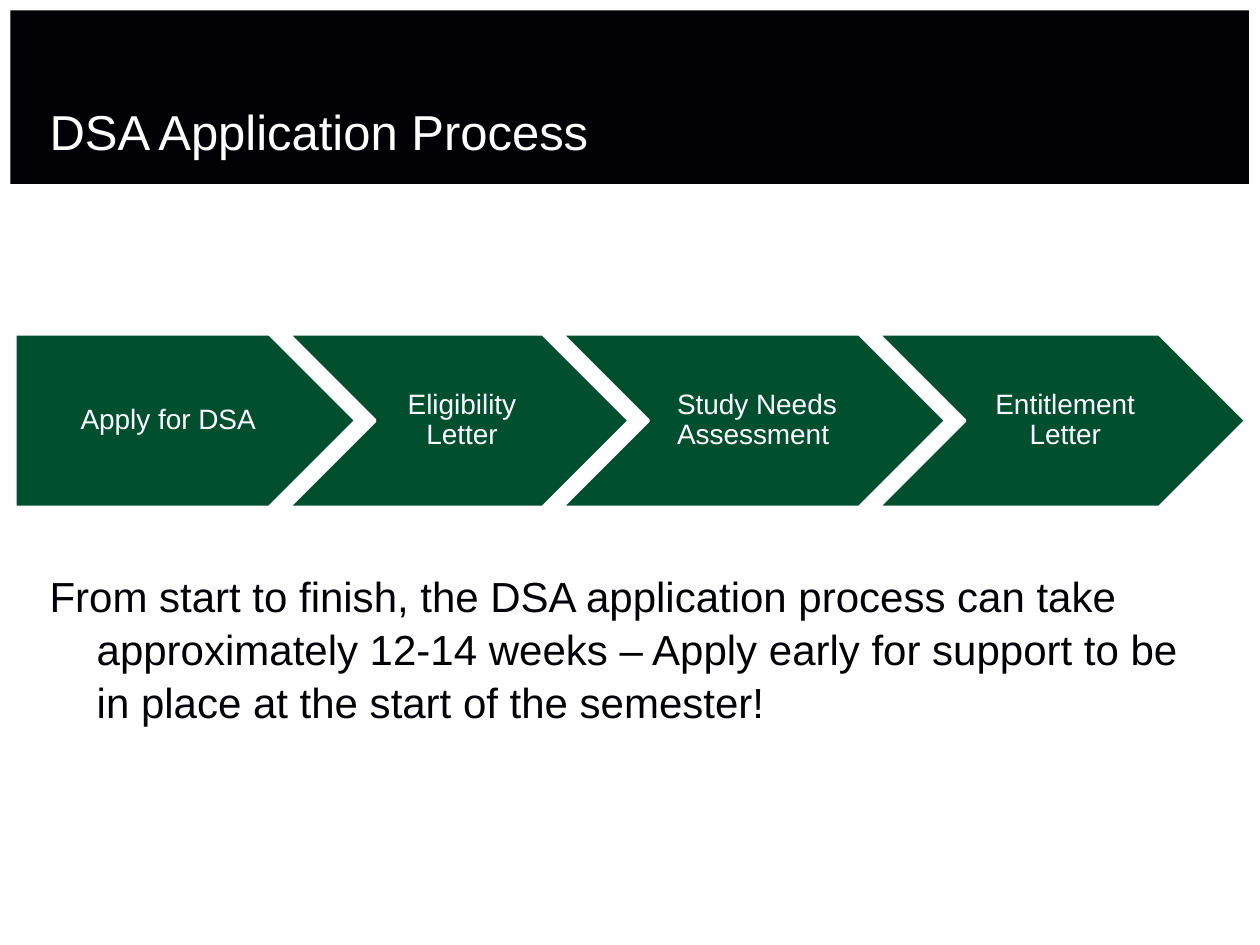
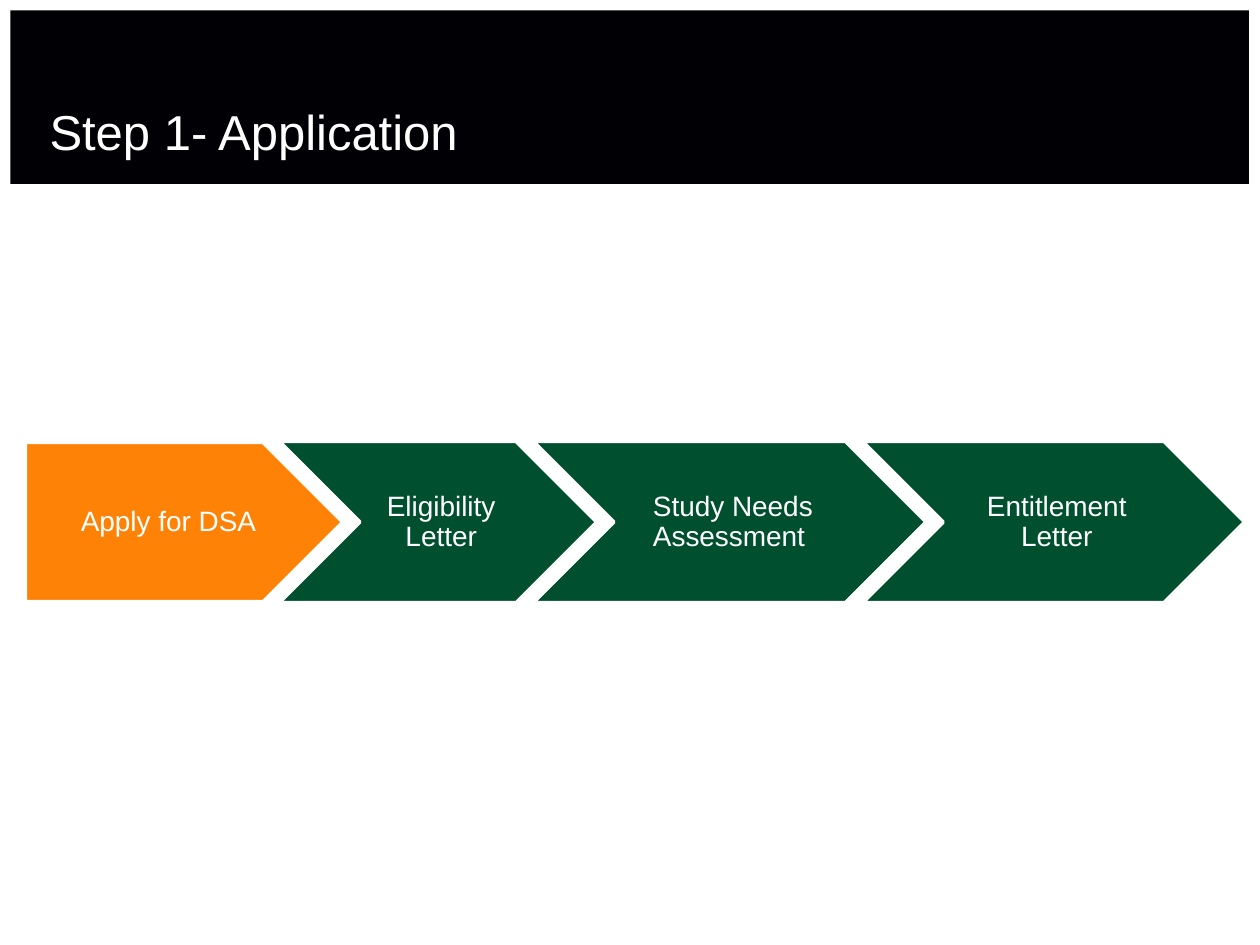
from pptx import Presentation
from pptx import util as u
from pptx.dml.color import RGBColor
from pptx.enum import shapes, text

HUES = {"ink": "000005", "paper": "FFFFFF", "green": "00502F", "orange": "FE8206"}
FACE = "Arial"
STEPS = ["Apply for DSA", "Eligibility Letter", "Study Needs Assessment ",
         "Entitlement Letter"]
NOTE = ("From start to finish, the DSA application process can take approximately "
        "12-14 weeks – Apply early for support to be in place at the start of "
        "the semester!")


def hue(name):
    """Return the named colour."""
    return RGBColor.from_string(HUES[name])


def write(shape, words, size, ink, anchor, align=text.PP_ALIGN.LEFT, pads=(0, 0, 0, 0)):
    """Fill a shape with one styled paragraph and return the paragraph."""
    frame = shape.text_frame
    frame.word_wrap = True
    frame.vertical_anchor = anchor
    (frame.margin_left, frame.margin_top,
     frame.margin_right, frame.margin_bottom) = map(u.Cm, pads)
    para = frame.paragraphs[0]
    para.text = words
    para.alignment = align
    font = para.font
    font.name, font.size = FACE, u.Pt(size)
    font.color.rgb = hue(ink)
    return para


def block(slide, kind, box, fill):
    """Draw a flat filled preset shape."""
    shape = slide.shapes.add_shape(kind, *map(u.Cm, box))
    shape.shadow.inherit = False
    shape.fill.solid()
    shape.fill.fore_color.rgb = hue(fill)
    shape.line.fill.background()
    return shape


def page(deck, title):
    """Add a slide with the dark band and its title."""
    slide = deck.slides.add_slide(deck.slide_layouts[6])
    block(slide, shapes.MSO_SHAPE.RECTANGLE, (0.21, 0.21, 24.97, 3.5), "ink")
    box = slide.shapes.add_textbox(*map(u.Cm, (1, 1.17, 13.54, 2.06)))
    write(box, title, 28, "paper", text.MSO_ANCHOR.BOTTOM)
    return slide


def chain(slide, left, top, high, lap, widths, active=None):
    """Draw the steps as overlapping arrows, with the active one in orange."""
    for i, (step, wide) in enumerate(zip(STEPS, widths)):
        kind = shapes.MSO_SHAPE.CHEVRON if i else shapes.MSO_SHAPE.PENTAGON
        trim = 0.02 if i == active else 0
        arrow = block(slide, kind, (left, top + trim, wide, high - 2 * trim),
                      "orange" if i == active else "green")
        arrow.line.color.rgb = hue("paper")
        arrow.line.width = u.Pt(2)
        para = write(arrow, step, 16, "paper", text.MSO_ANCHOR.MIDDLE,
                     text.PP_ALIGN.CENTER, (0.18 if i else 0.23, 0.12, 0.05, 0.12))
        para.line_spacing = 0.9
        left += wide - lap


def note(slide, words):
    """Add the closing remark with a hanging indent."""
    box = slide.shapes.add_textbox(*map(u.Cm, (1, 11.46, 23.42, 5.25)))
    para = write(box, words, 24, "ink", text.MSO_ANCHOR.TOP)
    para.line_spacing = 1.05
    props = para._p.get_or_add_pPr()
    props.set("marL", str(u.Cm(0.95)))
    props.set("indent", str(-u.Cm(0.95)))


def main():
    """Build and save the deck."""
    deck = Presentation()
    deck.slide_width, deck.slide_height = u.Cm(25.4), u.Cm(19.05)
    slide = page(deck, "DSA Application Process")
    chain(slide, 0.3, 6.73, 3.5, 1.37, (6.88, 6.88, 7.75, 7.42))
    note(slide, NOTE)
    slide = page(deck, "Step 1- Application")
    chain(slide, 0.51, 8.9, 3.25, 1.28, (6.4, 6.4, 7.92, 7.7), active=0)
    deck.save("out.pptx")


if __name__ == "__main__":
    main()
